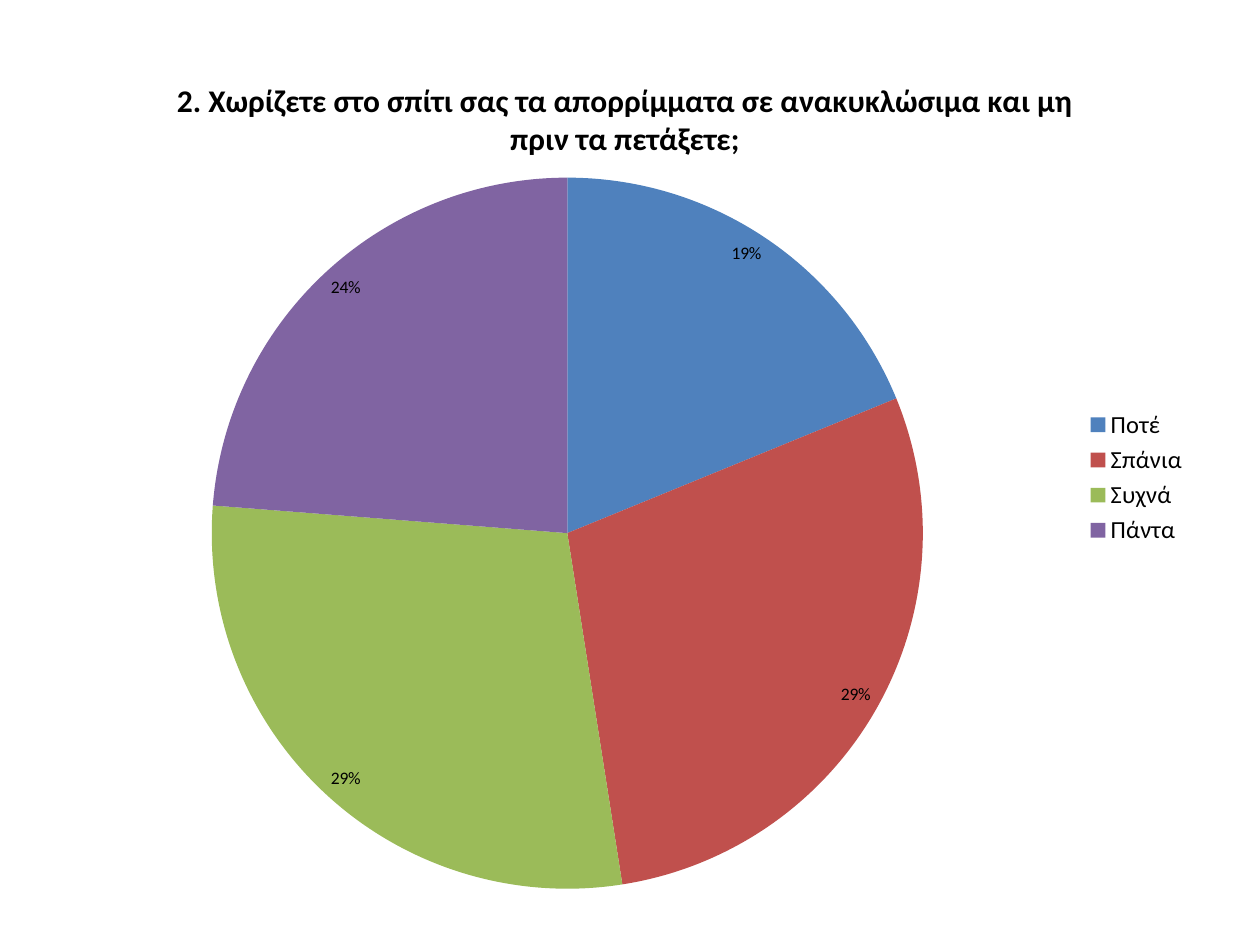
"""Build a one-slide deck with a pie chart of household recycling habits."""
from dataclasses import dataclass

from lxml import etree
from pptx import Presentation
from pptx import util as u
from pptx.chart.data import CategoryChartData
from pptx.dml.color import RGBColor
from pptx.enum import chart as ch

QUESTION = "2. Χωρίζετε στο σπίτι σας τα απορρίμματα σε ανακυκλώσιμα και μη πριν τα πετάξετε;"
ANSWERS = [
    ("Ποτέ", 19, "4F81BD"),
    ("Σπάνια", 29, "C0504D"),
    ("Συχνά", 29, "9BBB59"),
    ("Πάντα", 24, "8064A2"),
]
CHART_BOX = (0.39, 0.39, 9.14, 6.8)
PLOT_AREA = {"x": 0.14, "y": 0.15, "w": 0.62, "h": 0.83}


@dataclass(frozen=True)
class Theme:
    font: str = "Calibri"
    ink: str = "000000"
    title: int = 18
    legend: int = 14
    label: int = 10


THEME = Theme()


def style_font(font, size, bold=False):
    font.name, font.size, font.bold = THEME.font, u.Pt(size), bold
    font.color.rgb = RGBColor.from_string(THEME.ink)


def place_plot(chart):
    plot_area = chart.plots[0]._element.getparent()
    namespace = etree.QName(plot_area).namespace
    tag = f"{{{namespace}}}"
    for old in plot_area.findall(tag + "layout"):
        plot_area.remove(old)
    layout = etree.Element(tag + "layout")
    manual = etree.SubElement(layout, tag + "manualLayout")
    settings = {"layoutTarget": "inner", "xMode": "edge", "yMode": "edge", **PLOT_AREA}
    for name, value in settings.items():
        etree.SubElement(manual, tag + name, val=str(value))
    plot_area.insert(0, layout)


def add_pie(page):
    names, values, colours = zip(*ANSWERS)
    data = CategoryChartData()
    data.categories = names
    data.add_series("Series 1", values)
    box = [u.Inches(length) for length in CHART_BOX]
    chart = page.shapes.add_chart(ch.XL_CHART_TYPE.PIE, *box, data).chart
    style_font(chart.font, THEME.label)

    chart.has_title = True
    frame = chart.chart_title.text_frame
    frame.text = QUESTION
    style_font(frame.paragraphs[0].runs[0].font, THEME.title, bold=True)
    chart.chart_title.include_in_layout = False

    chart.has_legend = True
    chart.legend.position = ch.XL_LEGEND_POSITION.RIGHT
    chart.legend.include_in_layout = False
    style_font(chart.legend.font, THEME.legend)

    plot = chart.plots[0]
    plot.vary_by_categories = True
    for index, colour in enumerate(colours):
        fill = plot.series[0].points[index].format.fill
        fill.solid()
        fill.fore_color.rgb = RGBColor.from_string(colour)

    plot.has_data_labels = True
    labels = plot.data_labels
    labels.show_percentage, labels.show_value = True, False
    labels.number_format, labels.number_format_is_linked = "0%", False
    labels.position = ch.XL_LABEL_POSITION.INSIDE_END
    style_font(labels.font, THEME.label)
    place_plot(chart)


def main():
    deck = Presentation()
    deck.slide_width, deck.slide_height = u.Inches(10), u.Inches(7.5)
    page = deck.slides.add_slide(deck.slide_layouts[6])
    add_pie(page)
    deck.save("out.pptx")


if __name__ == "__main__":
    main()
